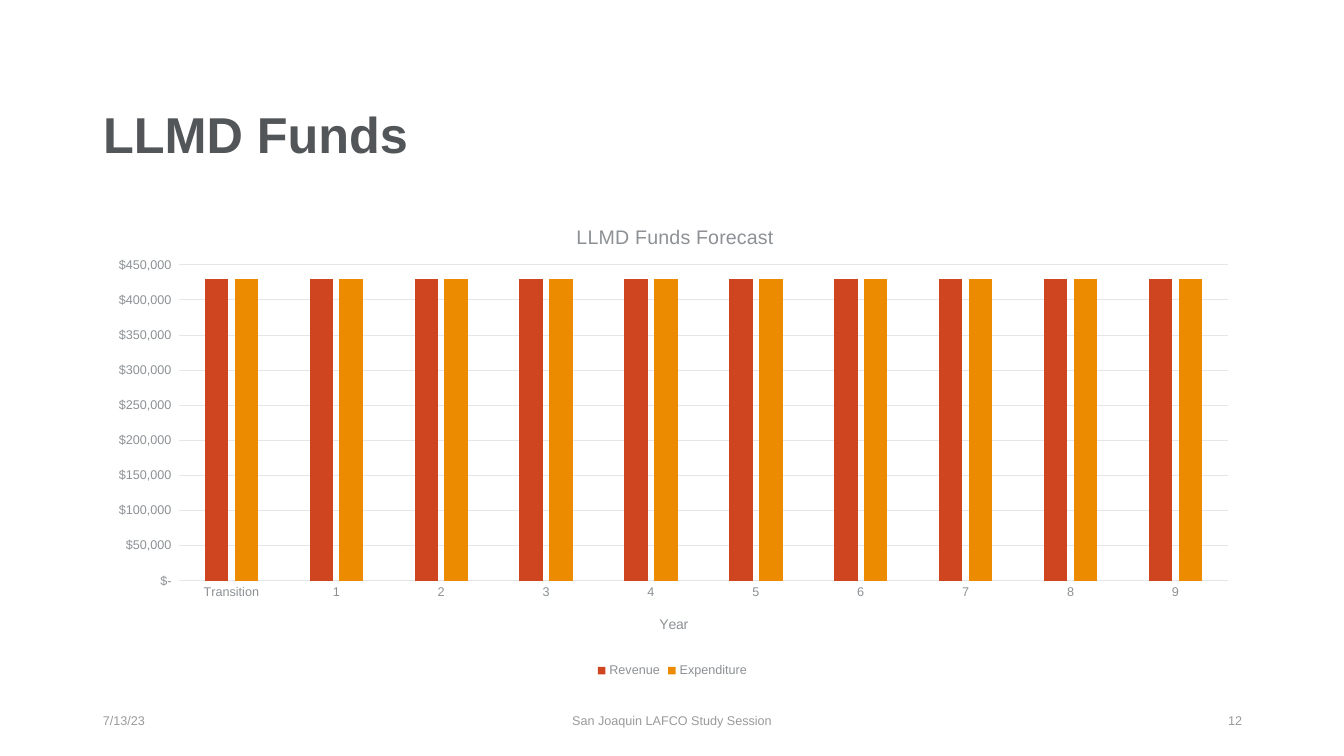
from lxml.etree import SubElement
from pptx import Presentation
from pptx.chart.data import CategoryChartData
from pptx.dml.color import RGBColor
from pptx.enum.chart import XL_CHART_TYPE, XL_LEGEND_POSITION, XL_TICK_MARK
from pptx.enum.text import MSO_ANCHOR, PP_ALIGN
from pptx.oxml import parse_xml
from pptx.oxml.ns import nsdecls, qn
from pptx.util import Emu, Pt

PX = 914400 / 100.8
COLORS = {
    "title": "535659", "label": "8D9195", "footer": "999A9B",
    "grid": "E5E6E7", "revenue": "CF4520", "expenditure": "ED8B00",
}
LEFT, TOP, WIDTH, HEIGHT = 93, 202, 1159, 480


def style(font, size, color, bold=False):
    font.name, font.size, font.bold = "Arial", Pt(size), bold
    font.color.rgb = RGBColor.from_string(COLORS[color])


def place(element, index, x, y, w=None, h=None):
    """Pin a chart part at slide pixels; a size marks the inner plot area."""
    for old in element.findall(qn("c:layout")):
        element.remove(old)
    layout = parse_xml(f"<c:layout {nsdecls('c')}><c:manualLayout/></c:layout>")
    settings = [("xMode", "edge"), ("yMode", "edge"),
                ("x", (x - LEFT) / WIDTH), ("y", (y - TOP) / HEIGHT)]
    if w:
        settings.insert(0, ("layoutTarget", "inner"))
        settings += [("w", w / WIDTH), ("h", h / HEIGHT)]
    for tag, value in settings:
        SubElement(layout[0], qn(f"c:{tag}")).set("val", str(value))
    element.insert(index, layout)


prs = Presentation()
prs.slide_width, prs.slide_height = Emu(round(1344 * PX)), Emu(round(756 * PX))
slide = prs.slides.add_slide(prs.slide_layouts[5])

# Title
title = slide.shapes.title
title.left, title.top, title.width, title.height = (
    Emu(round(n * PX)) for n in (LEFT, 87, WIDTH, 100))
tf = title.text_frame
tf.vertical_anchor = MSO_ANCHOR.MIDDLE
p = tf.paragraphs[0]
p.alignment, p.line_spacing = PP_ALIGN.LEFT, 0.9
r = p.add_run()
r.text = "LLMD Funds"
style(r.font, 36, "title", True)

# Forecast chart
data = CategoryChartData()
data.categories = ["Transition"] + [str(year) for year in range(1, 10)]
for name in ("Revenue", "Expenditure"):
    data.add_series(name, [430000] * 10)
chart = slide.shapes.add_chart(
    XL_CHART_TYPE.COLUMN_CLUSTERED,
    *(Emu(round(n * PX)) for n in (LEFT, TOP, WIDTH, HEIGHT)), data).chart
style(chart.font, 10, "title")

plot = chart.plots[0]
plot.gap_width, plot.overlap, plot.vary_by_categories = 219, -27, False
for series in plot.series:
    series.format.fill.solid()
    series.format.fill.fore_color.rgb = RGBColor.from_string(COLORS[series.name.lower()])

cat_axis, val_axis = chart.category_axis, chart.value_axis
for axis in (cat_axis, val_axis):
    axis.major_tick_mark = axis.minor_tick_mark = XL_TICK_MARK.NONE
    style(axis.tick_labels.font, 9, "label")
val_axis.minimum_scale, val_axis.maximum_scale, val_axis.major_unit = 0, 450000, 50000
val_axis.format.line.fill.background()
val_axis.tick_labels.number_format = r'_("$"* #,##0_);_("$"* \(#,##0\);_("$"* "-"_);_(@_)'
val_axis.tick_labels.number_format_is_linked = False
for line in (cat_axis.format.line, val_axis.major_gridlines.format.line):
    line.color.rgb = RGBColor.from_string(COLORS["grid"])
    line.width = Pt(0.75)

for chart_title, text, size, x, y in (
        (chart.chart_title, "LLMD Funds Forecast", 14, 573, 221),
        (cat_axis.axis_title, "Year", 10, 657, 613)):
    r = chart_title.text_frame.paragraphs[0].add_run()
    r.text = text
    style(r.font, size, "label")
    place(chart_title._element, 1, x, y)
chart.chart_title.include_in_layout = False

chart.has_legend = True
chart.legend.position = XL_LEGEND_POSITION.BOTTOM
chart.legend.include_in_layout = False
style(chart.legend.font, 9, "label")
plot_area = chart._chartSpace.chart.plotArea
place(plot_area, 0, 179, 265, 1049, 316)

# Footer
for text, x, w, align in (
        ("7/13/23", 93, 302, PP_ALIGN.LEFT),
        ("San Joaquin LAFCO Study Session", 445, 454, PP_ALIGN.CENTER),
        ("12", 950, 302, PP_ALIGN.RIGHT)):
    sp = slide.shapes.add_textbox(*(Emu(round(n * PX)) for n in (x, 701, w, 40)))
    tf = sp.text_frame
    tf.word_wrap, tf.vertical_anchor = True, MSO_ANCHOR.MIDDLE
    p = tf.paragraphs[0]
    p.alignment = align
    r = p.add_run()
    r.text = text
    style(r.font, 9, "footer")

prs.save("out.pptx")
